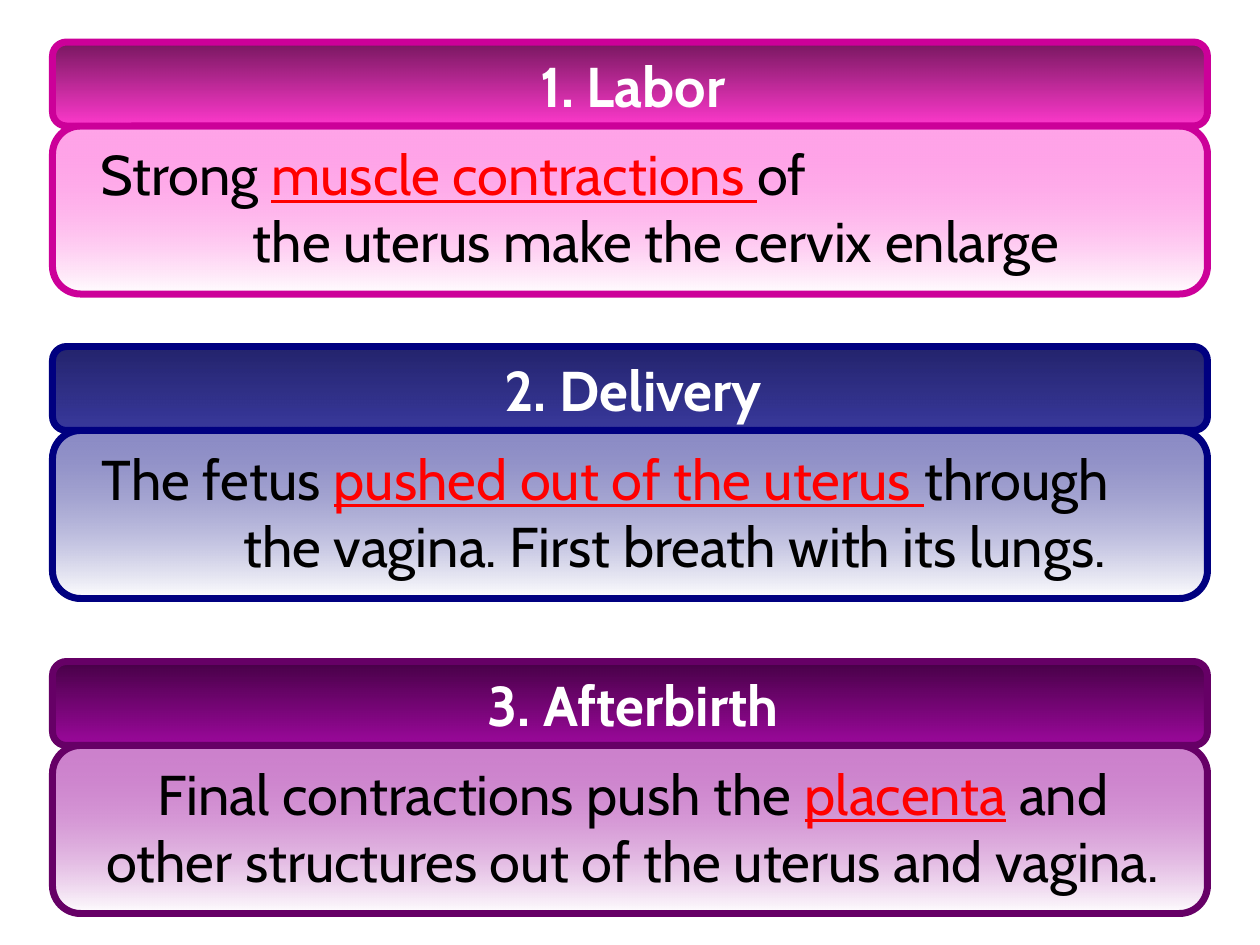
"""Build a slide showing the three stages of birth as headed panels."""
from pptx import Presentation
from pptx.dml.color import RGBColor
from pptx.enum.shapes import MSO_SHAPE as Shape
from pptx.enum.text import PP_ALIGN as Align
from pptx.oxml.ns import qn
from pptx.util import Pt
from lxml.etree import SubElement

PX = 7620
BLACK = RGBColor(0, 0, 0)
WHITE = RGBColor(255, 255, 255)
RED = RGBColor(255, 0, 0)
PINK = RGBColor(0xFF, 0x33, 0xCC)
PINK_DARK = RGBColor(0x76, 0x18, 0x5E)
PINK_EDGE = RGBColor(0xCC, 0x00, 0x99)
BLUE = RGBColor(0x33, 0x33, 0x99)
BLUE_DARK = RGBColor(0x24, 0x24, 0x6D)
BLUE_EDGE = RGBColor(0x00, 0x00, 0x80)
PURPLE = RGBColor(0x99, 0x00, 0x99)
PURPLE_DARK = RGBColor(0x47, 0x00, 0x47)
PURPLE_EDGE = RGBColor(0x66, 0x00, 0x66)

PLAIN = {"name": "Cabin", "size": Pt(32)}
HEADING = PLAIN | {"bold": True}
KEY = PLAIN | {"underline": True}

STAGES = [
    {"top": 40, "heading": "1. Labor",
     "text": ("Strong ", "muscle contractions ", "of\vthe uterus make the cervix enlarge"),
     "indents": (2, 147), "colors": (PINK_DARK, PINK, PINK_EDGE), "opacity": 44},
    {"top": 330, "heading": "2. Delivery",
     "text": ("The fetus ", "pushed out of the uterus ",
              "through\vthe vagina. First breath with its lungs."),
     "indents": (3, 138), "colors": (BLUE_DARK, BLUE, BLUE_EDGE), "opacity": 57},
    {"top": 630, "heading": "3. Afterbirth",
     "text": ("Final contractions push the ", "placenta",
              " and other structures out of the uterus and vagina."),
     "indents": None, "colors": (PURPLE_DARK, PURPLE, PURPLE_EDGE), "opacity": 49},
]
LEFT, WIDTH = 50, 1100
TEXT_LEFT, TEXT_WIDTH = 82, 1042
HEADER_HEIGHT, BODY_HEIGHT = 80, 160


def px(*lengths):
    return [length * PX for length in lengths]


def add_panel(group, top, height, edge, stops):
    panel = group.shapes.add_shape(Shape.ROUNDED_RECTANGLE, *px(LEFT, top, WIDTH, height))
    panel.shadow.inherit = False
    panel.line.color.rgb = edge
    panel.line.width = Pt(4)
    panel.fill.gradient()
    panel.fill.gradient_angle = 270
    for stop, position, (color, _) in zip(panel.fill.gradient_stops, (0, 1), stops):
        stop.position = position
        stop.color.rgb = color
    gradient = panel._element.spPr.find(qn("a:gradFill"))
    for color_node, (_, opacity) in zip(gradient.iter(qn("a:srgbClr")), stops):
        if opacity < 100:
            SubElement(color_node, qn("a:alpha")).set("val", str(opacity * 1000))


def add_text(group, top, height, runs, indents=None):
    label = group.shapes.add_textbox(*px(TEXT_LEFT, top, TEXT_WIDTH, height))
    label.text_frame.word_wrap = True
    paragraph = label.text_frame.paragraphs[0]
    paragraph.alignment = Align.LEFT if indents else Align.CENTER
    if indents:
        first, following = px(*indents)
        properties = paragraph._p.get_or_add_pPr()
        properties.set("marL", str(following))
        properties.set("indent", str(first - following))
    for words, color, style in runs:
        for number, line in enumerate(words.split("\v")):
            if number:
                paragraph.add_line_break()
            run = paragraph.add_run()
            run.text = line
            run.font.color.rgb = color
            for attribute, value in style.items():
                setattr(run.font, attribute, value)


def add_stage(slide, stage):
    dark, main, edge = stage["colors"]
    header_top = stage["top"]
    body_top = header_top + HEADER_HEIGHT

    body = slide.shapes.add_group_shape()
    add_panel(body, body_top, BODY_HEIGHT, edge, [(main, stage["opacity"]), (WHITE, 100)])
    runs = zip(stage["text"], (BLACK, RED, BLACK), (PLAIN, KEY, PLAIN))
    add_text(body, body_top + 7, 140, runs, stage["indents"])

    header = slide.shapes.add_group_shape()
    add_panel(header, header_top, HEADER_HEIGHT, edge, [(dark, 100), (main, 97)])
    add_text(header, header_top + 3, 76, [(stage["heading"], WHITE, HEADING)])


def main():
    deck = Presentation()
    deck.slide_width, deck.slide_height = px(1200, 900)
    slide = deck.slides.add_slide(deck.slide_layouts[6])
    for stage in STAGES:
        add_stage(slide, stage)
    deck.save("out.pptx")


if __name__ == "__main__":
    main()
